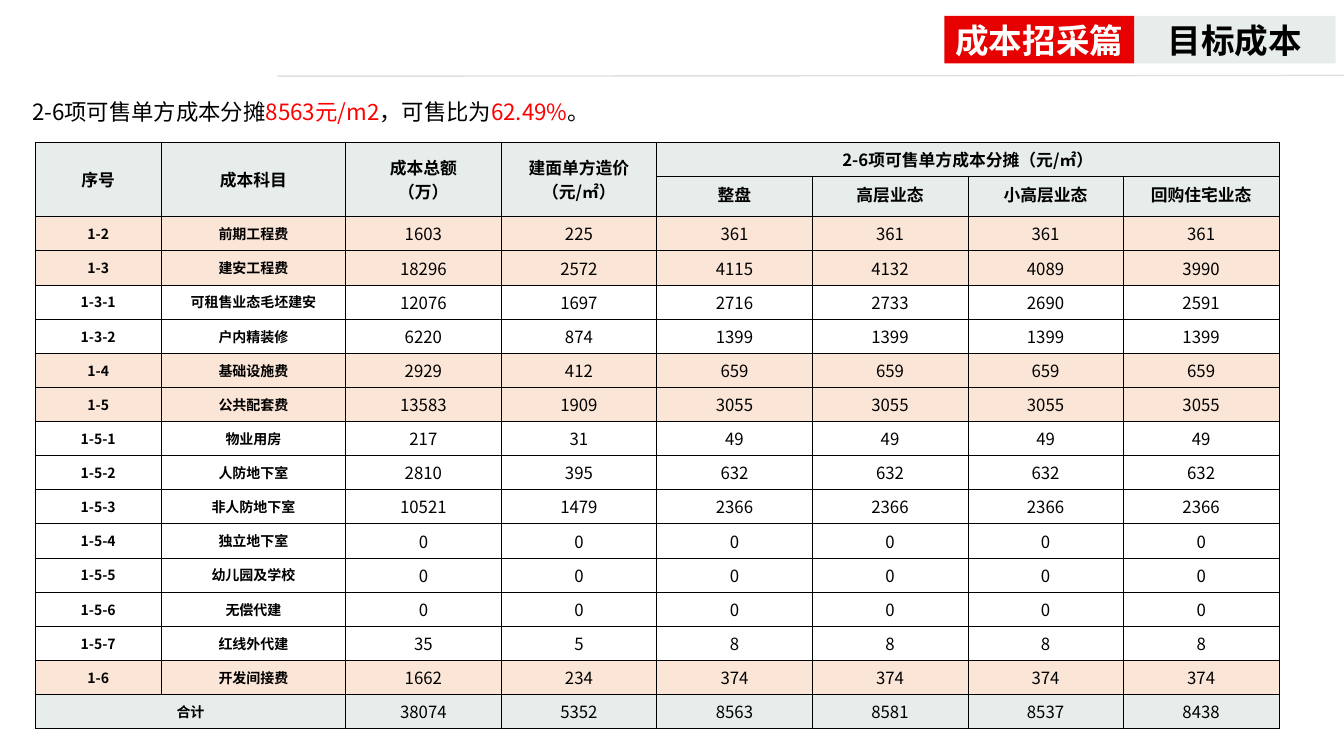
from pptx import Presentation
from pptx.dml.color import RGBColor
from pptx.enum.shapes import MSO_CONNECTOR as Connector, MSO_SHAPE as Shape
from pptx.enum.text import MSO_ANCHOR as Anchor, MSO_AUTO_SIZE as AutoSize, PP_ALIGN as Align
from pptx.oxml.ns import qn
from pptx.util import Cm, Pt
from lxml.etree import SubElement, Element

FONT = "Noto Sans CJK SC"
COLORS = {"black": "000000", "white": "FFFFFF", "red": "E60000", "accent": "FF0000",
          "mist": "E7EDEA", "peach": "FBE5D6", "rule": "C0C0C0"}

TITLES = [("目标成本", 28.58, 5.08, "mist", "black"),
          ("成本招采篇", 23.8, 4.78, "red", "white")]
SUMMARY = [("2-6项可售单方成本分摊", "black"), ("8563元/m2", "accent"),
           ("，可售比为", "black"), ("62.49%", "accent"), ("。", "black")]
HEADERS = [
    ["序号", "成本科目", "成本总额\n（万）", "建面单方造价\n（元/㎡）",
     "2-6项可售单方成本分摊（元/㎡）", "", "", ""],
    ["", "", "", "", "整盘", "高层业态", "小高层业态", "回购住宅业态"],
]
COSTS = [
    ("1-2", "前期工程费", 1603, 225, 361, 361, 361, 361),
    ("1-3", "建安工程费", 18296, 2572, 4115, 4132, 4089, 3990),
    ("1-3-1", "可租售业态毛坯建安", 12076, 1697, 2716, 2733, 2690, 2591),
    ("1-3-2", "户内精装修", 6220, 874, 1399, 1399, 1399, 1399),
    ("1-4", "基础设施费", 2929, 412, 659, 659, 659, 659),
    ("1-5", "公共配套费", 13583, 1909, 3055, 3055, 3055, 3055),
    ("1-5-1", "物业用房", 217, 31, 49, 49, 49, 49),
    ("1-5-2", "人防地下室", 2810, 395, 632, 632, 632, 632),
    ("1-5-3", "非人防地下室", 10521, 1479, 2366, 2366, 2366, 2366),
    ("1-5-4", "独立地下室", 0, 0, 0, 0, 0, 0),
    ("1-5-5", "幼儿园及学校", 0, 0, 0, 0, 0, 0),
    ("1-5-6", "无偿代建", 0, 0, 0, 0, 0, 0),
    ("1-5-7", "红线外代建", 35, 5, 8, 8, 8, 8),
    ("1-6", "开发间接费", 1662, 234, 374, 374, 374, 374),
    ("合计", "", 38074, 5352, 8563, 8581, 8537, 8438),
]
COLUMN_WIDTHS = [3.17, 4.65] + [3.92] * 6
ROW_HEIGHT, SUBHEADER_HEIGHT = 0.86, 1.01
MERGES = [(0, column, 1, column) for column in range(4)] + [(0, 4, 0, 7), (16, 0, 16, 1)]


def rgb(name):
    return RGBColor.from_string(COLORS[name])


def write(paragraph, text, size=12, bold=False, color="black", align=Align.CENTER):
    paragraph.alignment = align
    if not text:
        SubElement(paragraph._p, qn("a:endParaRPr"), sz=str(size * 100))
        return
    run = paragraph.add_run()
    run.text = text
    run.font.name, run.font.size, run.font.bold = FONT, Pt(size), bold
    run.font.color.rgb = rgb(color)
    SubElement(run.font._element, qn("a:ea"), typeface=FONT)


def add_borders(cell):
    properties = cell._tc.get_or_add_tcPr()
    for index, side in enumerate(("lnL", "lnR", "lnT", "lnB")):
        border = Element(qn(f"a:{side}"), w=str(Pt(0.5)))
        SubElement(SubElement(border, qn("a:solidFill")), qn("a:srgbClr"), val=COLORS["black"])
        properties.insert(index, border)


def row_fill(row, code):
    if row < len(HEADERS) or code == "合计":
        return "mist"
    return "peach" if code.count("-") == 1 else None


def add_cost_table(slide):
    rows = HEADERS + COSTS
    heights = [ROW_HEIGHT] * len(rows)
    heights[1] = SUBHEADER_HEIGHT
    frame = slide.shapes.add_table(len(rows), len(COLUMN_WIDTHS), Cm(0.89), Cm(3.58),
                                   Cm(sum(COLUMN_WIDTHS)), Cm(sum(heights)))
    table = frame.table
    for column, width in zip(table.columns, COLUMN_WIDTHS):
        column.width = Cm(width)
    for row, height in zip(table.rows, heights):
        row.height = Cm(height)
    for r, values in enumerate(rows):
        fill = row_fill(r, values[0])
        is_header = r < len(HEADERS)
        for c, value in enumerate(values):
            cell = table.cell(r, c)
            cell.margin_left = cell.margin_right = cell.margin_top = cell.margin_bottom = 0
            if r == 1 and c >= 4:
                cell.margin_bottom = Cm(0.13)
            cell.vertical_anchor = Anchor.MIDDLE
            add_borders(cell)
            if fill:
                cell.fill.solid()
                cell.fill.fore_color.rgb = rgb(fill)
            else:
                cell.fill.background()
            for i, line in enumerate(str(value).split("\n")):
                paragraph = cell.text_frame.paragraphs[0] if i == 0 else cell.text_frame.add_paragraph()
                write(paragraph, line, size=12 if is_header or c >= 2 else 10,
                      bold=is_header or c < 2)
    for top, left, bottom, right in MERGES:
        table.cell(top, left).merge(table.cell(bottom, right))


def add_title(slide, text, left, width, fill, color):
    title = slide.shapes.add_shape(Shape.RECTANGLE, Cm(left), Cm(0.4), Cm(width), Cm(1.2))
    title.shadow.inherit = False
    title.fill.solid()
    title.fill.fore_color.rgb = rgb(fill)
    title.line.fill.background()
    title.text_frame.vertical_anchor = Anchor.MIDDLE
    write(title.text_frame.paragraphs[0], text, size=24, bold=True, color=color)


def add_header_rule(slide):
    rule = slide.shapes.add_connector(Connector.STRAIGHT, Cm(6.99), Cm(1.92), Cm(33.87), Cm(1.9))
    rule.line.width = Pt(1)
    rule.line.color.rgb = rgb("rule")
    shade = rule._element.spPr.find(".//" + qn("a:srgbClr"))
    SubElement(shade, qn("a:alpha"), val="50000")
    SubElement(rule._element.spPr, qn("a:effectLst"))


def add_summary(slide):
    summary = slide.shapes.add_textbox(Cm(0.56), Cm(2.34), Cm(32.74), Cm(0.94)).text_frame
    summary.word_wrap = True
    summary.auto_size = AutoSize.SHAPE_TO_FIT_TEXT
    for text, color in SUMMARY:
        write(summary.paragraphs[0], text, size=16, color=color, align=Align.LEFT)


def main():
    deck = Presentation()
    deck.slide_width, deck.slide_height = Cm(33.87), Cm(19.05)
    slide = deck.slides.add_slide(deck.slide_layouts[6])
    add_header_rule(slide)
    add_summary(slide)
    add_cost_table(slide)
    for title in TITLES:
        add_title(slide, *title)
    deck.save("out.pptx")


if __name__ == "__main__":
    main()
